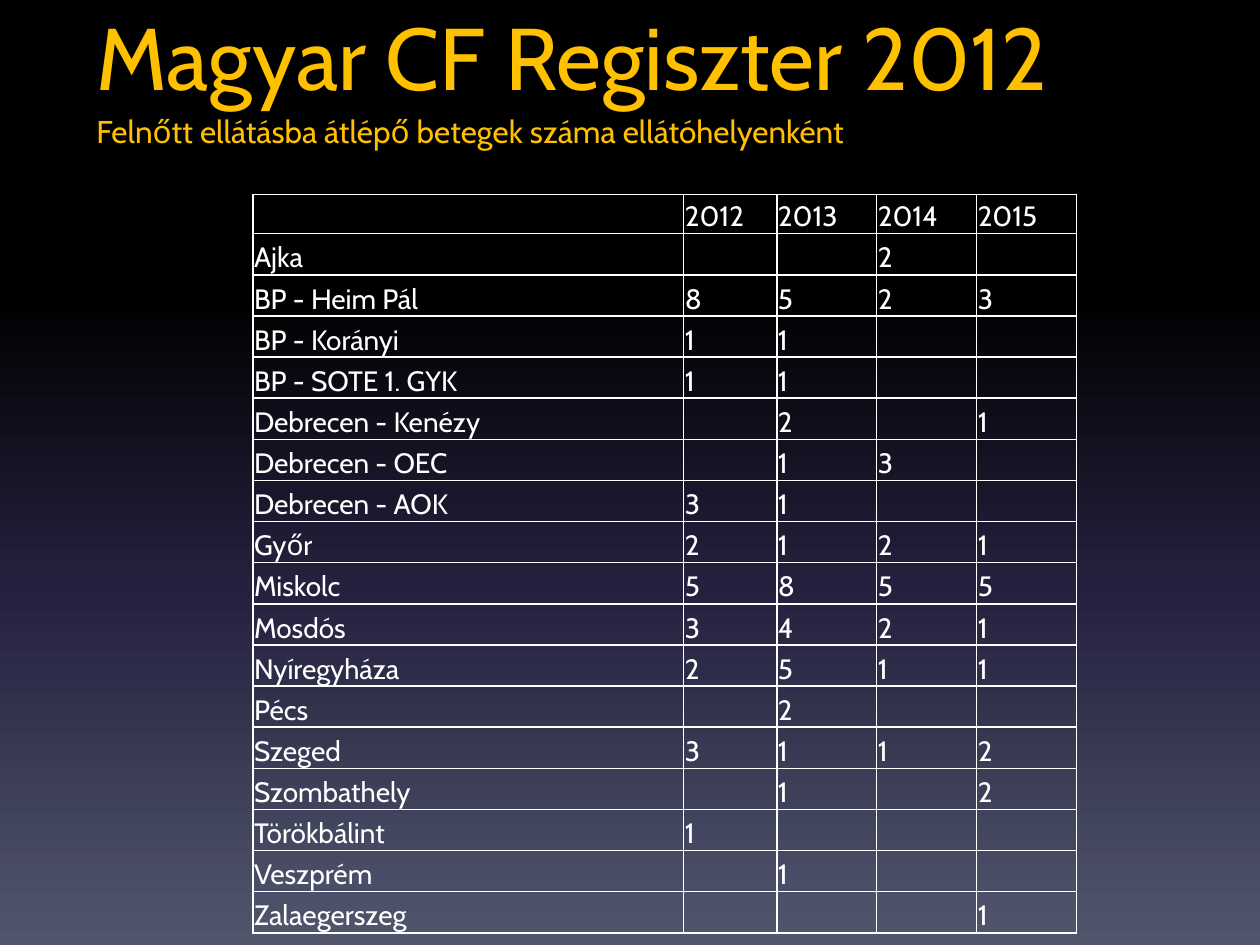
from lxml.etree import SubElement
from pptx import Presentation
from pptx.dml.color import RGBColor as RGB
from pptx.enum.text import MSO_ANCHOR as Anchor, MSO_AUTO_SIZE as AutoSize
from pptx.oxml.ns import qn
from pptx.util import Pt

# Content
TITLE = "Magyar CF Regiszter 2012"
SUBTITLE = "Felnőtt ellátásba átlépő betegek száma ellátóhelyenként"
ROWS = [
    ("", "2012", "2013", "2014", "2015"),
    ("Ajka", "", "", "2", ""),
    ("BP - Heim Pál", "8", "5", "2", "3"),
    ("BP - Korányi", "1", "1", "", ""),
    ("BP - SOTE 1. GYK", "1", "1", "", ""),
    ("Debrecen - Kenézy", "", "2", "", "1"),
    ("Debrecen - OEC", "", "1", "3", ""),
    ("Debrecen - AOK", "3", "1", "", ""),
    ("Győr", "2", "1", "2", "1"),
    ("Miskolc", "5", "8", "5", "5"),
    ("Mosdós", "3", "4", "2", "1"),
    ("Nyíregyháza", "2", "5", "1", "1"),
    ("Pécs", "", "2", "", ""),
    ("Szeged", "3", "1", "1", "2"),
    ("Szombathely", "", "1", "", "2"),
    ("Törökbálint", "1", "", "", ""),
    ("Veszprém", "", "1", "", ""),
    ("Zalaegerszeg", "", "", "", "1"),
]

THEME = {
    "font": "Cabin",
    "heading": "FFC000",
    "table": "FFFFFF",
    "title_size": 50,
    "subtitle_size": 18,
    "table_size": 16,
    "border_width": 1,
    "background": [(0, "000000"), (31, "000000"), (62, "24213E"), (100, "51566D")],
}

# Layout in points
TABLE_LEFT, TABLE_TOP = 144.5, 111.3
COLUMN_WIDTHS = [246.2, 53.2, 57.1, 57.1, 57.1]
HEADER_HEIGHT, ROW_HEIGHT = 22.3, 23.5
TEXT_LEFT = 48


def add_run(paragraph, text, size, color):
    run = paragraph.add_run()
    run.text = text
    run.font.name = THEME["font"]
    run.font.size = Pt(size)
    run.font.color.rgb = RGB.from_string(color)


def add_heading(slide, text, top, width, height, size, wrap, auto_size):
    box = slide.shapes.add_textbox(Pt(TEXT_LEFT), Pt(top), Pt(width), Pt(height))
    box.text_frame.word_wrap = wrap
    box.text_frame.auto_size = auto_size
    add_run(box.text_frame.paragraphs[0], text, size, THEME["heading"])


def add_solid_color(parent, color):
    fill = SubElement(parent, qn("a:solidFill"))
    SubElement(fill, qn("a:srgbClr"), val=color)


def set_background(slide):
    fill = slide.background.fill
    fill.gradient()
    fill.gradient_angle = 270
    stops = slide.background._cSld.find(".//" + qn("a:gsLst"))
    for stop in list(stops):
        stops.remove(stop)
    for position, color in THEME["background"]:
        stop = SubElement(stops, qn("a:gs"), pos=str(position * 1000))
        SubElement(stop, qn("a:srgbClr"), val=color)


def format_cell(cell, text):
    cell.vertical_anchor = Anchor.BOTTOM
    cell.margin_left = cell.margin_right = cell.margin_top = Pt(0.7)
    cell.margin_bottom = Pt(0)
    properties = cell._tc.get_or_add_tcPr()
    for side in ("lnL", "lnR", "lnT", "lnB"):
        border = SubElement(properties, qn("a:" + side), w=str(Pt(THEME["border_width"])))
        add_solid_color(border, THEME["table"])
    cell.fill.background()
    paragraph = cell.text_frame.paragraphs[0]
    if text:
        add_run(paragraph, text, THEME["table_size"], THEME["table"])
    else:
        paragraph._p.get_or_add_endParaRPr().set("sz", str(THEME["table_size"] * 100))


def add_patient_table(slide):
    heights = [HEADER_HEIGHT] + [ROW_HEIGHT] * (len(ROWS) - 1)
    table = slide.shapes.add_table(
        len(ROWS), len(COLUMN_WIDTHS), Pt(TABLE_LEFT), Pt(TABLE_TOP),
        Pt(sum(COLUMN_WIDTHS)), Pt(sum(heights))).table
    table.first_row = table.horz_banding = False
    for column, width in zip(table.columns, COLUMN_WIDTHS):
        column.width = Pt(width)
    for row, height, values in zip(table.rows, heights, ROWS):
        row.height = Pt(height)
        for cell, value in zip(row.cells, values):
            format_cell(cell, value)


def main():
    presentation = Presentation()
    presentation.slide_width, presentation.slide_height = Pt(720), Pt(540)
    slide = presentation.slides.add_slide(presentation.slide_layouts[6])
    set_background(slide)
    add_patient_table(slide)
    # Subtitle and title
    add_heading(slide, SUBTITLE, 60.5, 472, 29, THEME["subtitle_size"],
                False, AutoSize.SHAPE_TO_FIT_TEXT)
    add_heading(slide, TITLE, -2, 648, 90, THEME["title_size"], True, AutoSize.NONE)
    presentation.save("out.pptx")


if __name__ == "__main__":
    main()
